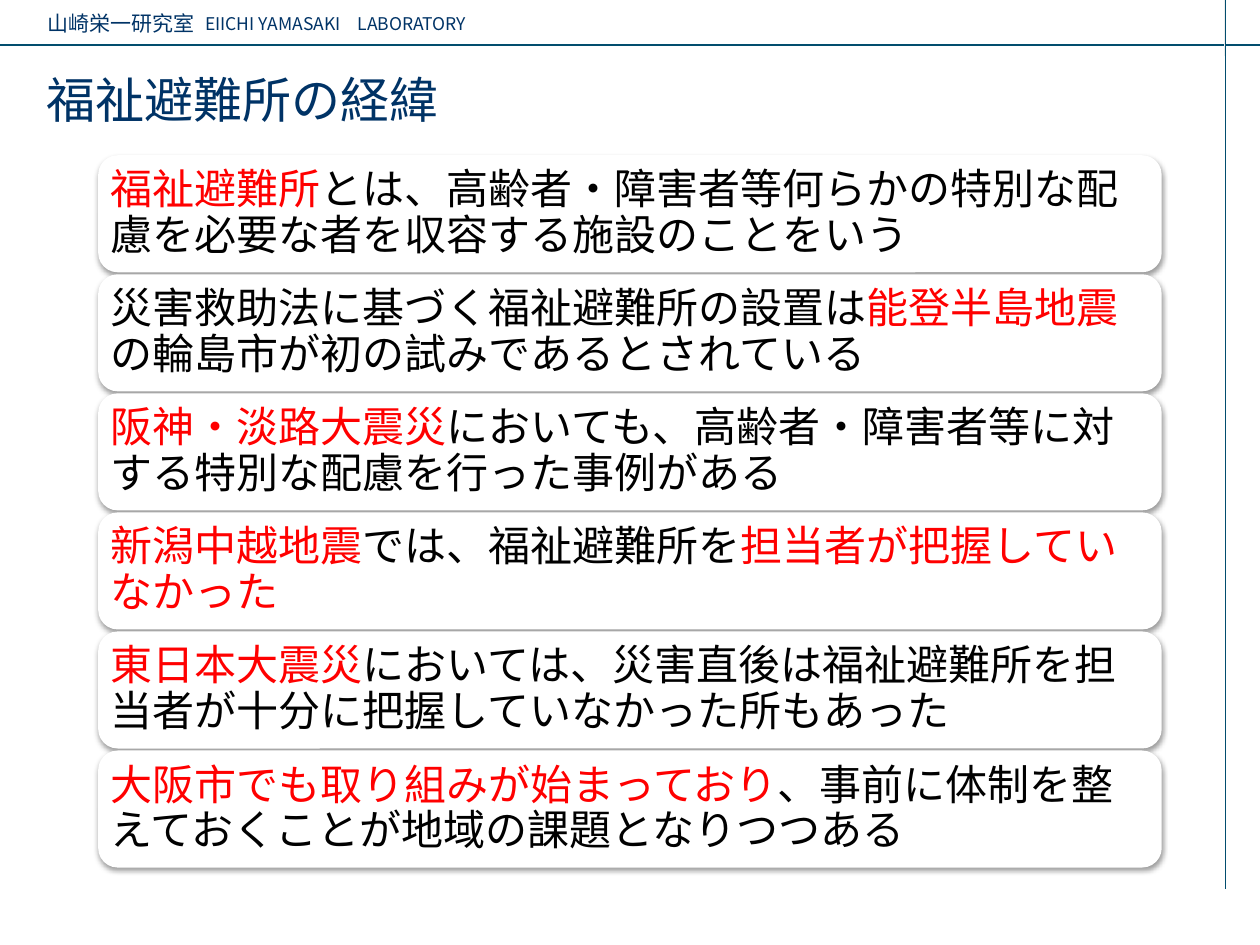
from dataclasses import dataclass

import pptx
import pptx.dml.color
import pptx.enum.shapes
import pptx.enum.text
import pptx.oxml
import pptx.util
from pptx.util import Cm

RGB = pptx.dml.color.RGBColor.from_string
NS = "http://schemas.openxmlformats.org/drawingml/2006/main"


@dataclass(frozen=True)
class Theme:
    navy: str = "003366"
    rule: str = "024D6E"
    pale: str = "EEEEEE"
    card: str = "FFFFFF"
    body: str = "000000"
    key: str = "FF0000"
    sans: str = "Noto Sans CJK JP"
    serif: str = "Times New Roman"
    title: int = 28
    text: int = 24
    lab: int = 12
    roman: int = 10


THEME = Theme()

# Each card is a list of (text, is key phrase).
CARDS = [
    [("福祉避難所", True),
     ("とは、高齢者・障害者等何らかの特別な配慮を必要な者を収容する施設のことをいう", False)],
    [("災害救助法に基づく福祉避難所の設置は", False), ("能登半島地震", True),
     ("の輪島市が初の試みであるとされている", False)],
    [("阪神・淡路大震災", True),
     ("においても、高齢者・障害者等に対する特別な配慮を行った事例がある", False)],
    [("新潟中越地震", True), ("では、福祉避難所を", False),
     ("担当者が把握していなかった", True)],
    [("東日本大震災", True),
     ("においては、災害直後は福祉避難所を担当者が十分に把握していなかった所もあった", False)],
    [("大阪市でも取り組みが始まっており", True),
     ("、事前に体制を整えておくことが地域の課題となりつつある", False)],
]


def set_font(para, face, size):
    para.font.name = face
    para.font.size = pptx.util.Pt(size)


def add_label(slide, text, left, top, width, height, face, size):
    box = slide.shapes.add_textbox(Cm(left), Cm(top), Cm(width), Cm(height))
    box.text_frame.word_wrap = True
    para = box.text_frame.paragraphs[0]
    para.text = text
    set_font(para, face, size)
    para.font.color.rgb = RGB(THEME.navy)


def add_rule(slide, x1, y1, x2, y2, color, width):
    line = slide.shapes.add_connector(
        pptx.enum.shapes.MSO_CONNECTOR.STRAIGHT, Cm(x1), Cm(y1), Cm(x2), Cm(y2))
    line.line.color.rgb = RGB(color)
    line.line.width = pptx.util.Pt(width)
    add_effect(line)


def add_effect(shape, inner=""):
    """Set the effect list; an empty one means no shadow."""
    xml = f'<a:effectLst xmlns:a="{NS}">{inner}</a:effectLst>'
    shape._element.spPr.append(pptx.oxml.parse_xml(xml))


def add_shadow(shape):
    blur, dist = pptx.util.Pt(3.1), pptx.util.Pt(1.6)
    add_effect(shape, (
        f'<a:outerShdw blurRad="{blur}" dist="{dist}" dir="5400000" rotWithShape="0">'
        '<a:srgbClr val="000000"><a:alpha val="38000"/></a:srgbClr></a:outerShdw>'))


def add_card(slide, parts, top):
    card = slide.shapes.add_shape(
        pptx.enum.shapes.MSO_SHAPE.ROUNDED_RECTANGLE,
        Cm(1.98), Cm(top), Cm(21.44), Cm(2.36))
    card.fill.solid()
    card.fill.fore_color.rgb = RGB(THEME.card)
    card.line.fill.background()
    add_shadow(card)
    frame = card.text_frame
    frame.word_wrap = True
    frame.vertical_anchor = pptx.enum.text.MSO_ANCHOR.MIDDLE
    frame.margin_left = frame.margin_right = Cm(0.14)
    frame.margin_top = frame.margin_bottom = Cm(0.14)
    para = frame.paragraphs[0]
    para.alignment = pptx.enum.text.PP_ALIGN.LEFT
    para.line_spacing = 0.9
    set_font(para, THEME.serif, THEME.text)
    for text, key in parts:
        run = para.add_run()
        run.text = text
        run.font.color.rgb = RGB(THEME.key if key else THEME.body)


def main():
    deck = pptx.Presentation()
    deck.slide_width, deck.slide_height = Cm(25.4), Cm(19.05)
    slide = deck.slides.add_slide(deck.slide_layouts[6])

    add_label(slide, "山崎栄一研究室", 0.71, 0.08, 7.8, 0.76, THEME.serif, THEME.lab)
    add_rule(slide, 0, 0.91, 25.4, 0.91, THEME.rule, 1.5)
    add_label(slide, "EIICHI YAMASAKI　LABORATORY", 3.89, 0.13, 14.4, 0.69,
              THEME.sans, THEME.roman)
    add_rule(slide, 24.69, 1.12, 24.69, 0, THEME.pale, 0.75)
    add_rule(slide, 24.71, 0, 24.71, 17.93, THEME.rule, 0.75)
    add_label(slide, "福祉避難所の経緯", 0.69, 1.27, 23.39, 2.62,
              THEME.sans, THEME.title)

    for row, parts in enumerate(CARDS):
        add_card(slide, parts, 3.13 + 2.4 * row)
    deck.save("out.pptx")


if __name__ == "__main__":
    main()
